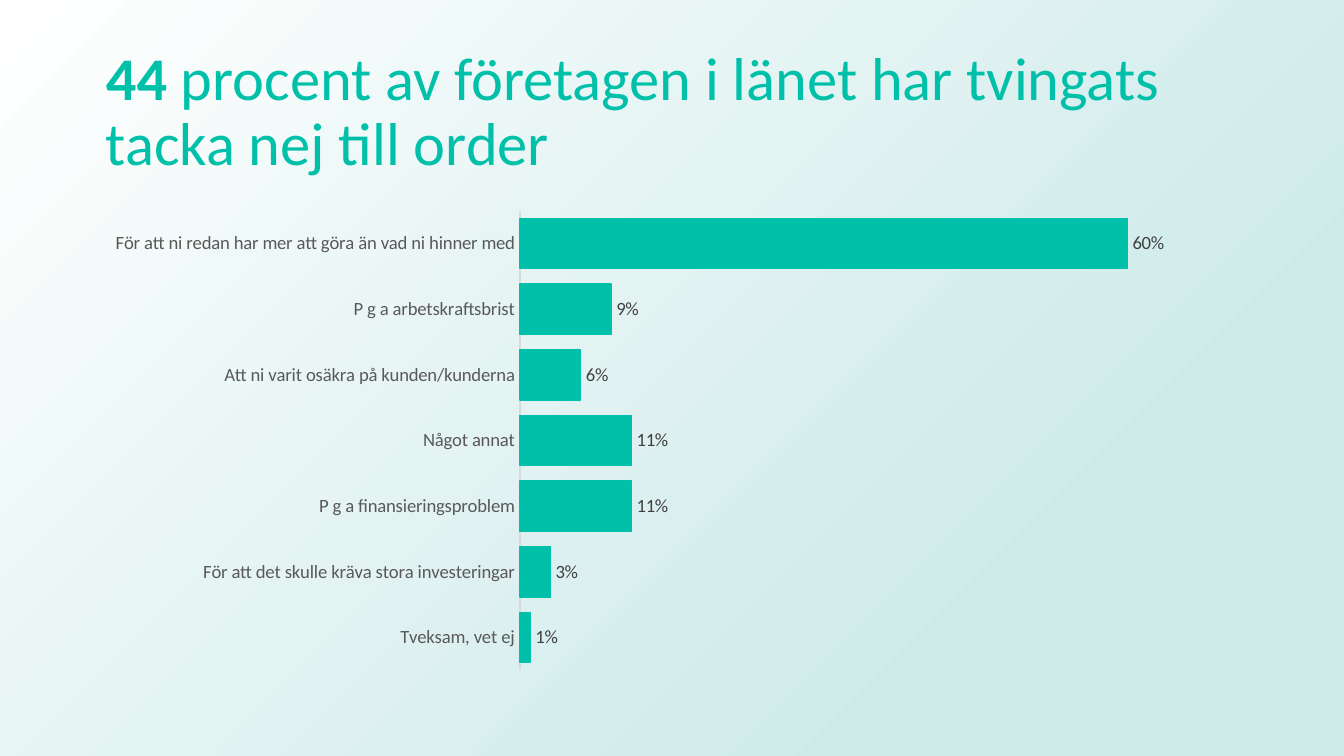
from lxml.etree import fromstring
from pptx import Presentation
from pptx.chart.data import CategoryChartData
from pptx.dml.color import RGBColor
from pptx.enum.chart import XL_CHART_TYPE, XL_LABEL_POSITION, XL_TICK_LABEL_POSITION, XL_TICK_MARK
from pptx.enum.shapes import MSO_SHAPE
from pptx.enum.text import MSO_ANCHOR, MSO_AUTO_SIZE, PP_ALIGN
from pptx.oxml.ns import nsdecls
from pptx.util import Inches, Pt

WIDE = Inches(10)
HIGH = WIDE * 9 // 16
TEAL, PALE, WHITE = "00C0A9", "CDEAE9", "FFFFFF"
GREY, DARK, RULE = "595959", "404040", "D9D9D9"
FACE = "Calibri"

REASONS = {
    "För att ni redan har mer att göra än vad ni hinner med": 0.60,
    "P g a arbetskraftsbrist": 0.09,
    "Att ni varit osäkra på kunden/kunderna": 0.06,
    "Något annat": 0.11,
    "P g a finansieringsproblem": 0.11,
    "För att det skulle kräva stora investeringar": 0.03,
    "Tveksam, vet ej": 0.01,
}


def paint(text):
    return RGBColor.from_string(text)


def apply(thing, values):
    for name, value in values.items():
        setattr(thing, name, value)


def style(font, size, color, bold=False):
    apply(font, {"name": FACE, "size": Pt(size), "bold": bold})
    font.color.rgb = paint(color)


def rule(line, color):
    line.color.rgb = paint(color)
    line.width = Pt(0.75)


def box(left, top, width, height):
    """Turn percentages of the slide into a frame."""
    return {"left": int(WIDE * left / 100), "top": int(HIGH * top / 100),
            "width": int(WIDE * width / 100), "height": int(HIGH * height / 100)}


def add_back(slide):
    back = slide.shapes.add_shape(MSO_SHAPE.RECTANGLE, **box(0, 0, 100, 100))
    back.shadow.inherit = False
    back.line.fill.background()
    # Radial fill centred on the lower right corner
    stops = "".join(
        f'<a:gs pos="{pos * 1000}"><a:srgbClr val="{color}"/></a:gs>'
        for pos, color in ((23, PALE), (100, WHITE)))
    fill = fromstring(
        f'<a:gradFill {nsdecls("a")} rotWithShape="1"><a:gsLst>{stops}</a:gsLst>'
        '<a:path path="circle"><a:fillToRect l="100000" t="100000"/></a:path>'
        '</a:gradFill>')
    back.element.spPr.prstGeom.addnext(fill)
    # Send behind the title
    slide.shapes.element.insert(2, back.element)


def add_title(slide, parts):
    title = slide.shapes.title
    apply(title, box(6.88, 5.32, 86.25, 19.33))
    frame = title.text_frame
    apply(frame, {"word_wrap": True, "auto_size": MSO_AUTO_SIZE.NONE,
                  "vertical_anchor": MSO_ANCHOR.MIDDLE})
    line = frame.paragraphs[0]
    apply(line, {"alignment": PP_ALIGN.LEFT, "line_spacing": 0.9})
    for text, bold in parts:
        run = line.add_run()
        run.text = text
        style(run.font, 32.4, TEAL, bold)


def add_bars(slide, shares):
    data = CategoryChartData(number_format="0%")
    data.categories = list(shares)
    data.add_series("Series 1", list(shares.values()))
    frame = box(6.88, 26.62, 86.25, 63.33)
    chart = slide.shapes.add_chart(
        XL_CHART_TYPE.BAR_CLUSTERED, frame["left"], frame["top"],
        frame["width"], frame["height"], data).chart
    apply(chart, {"has_legend": False, "has_title": False})
    style(chart.font, 10, "000000")

    # Axes
    plain = {"has_major_gridlines": False,
             "major_tick_mark": XL_TICK_MARK.NONE,
             "minor_tick_mark": XL_TICK_MARK.NONE,
             "tick_label_position": XL_TICK_LABEL_POSITION.NEXT_TO_AXIS}
    names, scale = chart.category_axis, chart.value_axis
    apply(names, {**plain, "reverse_order": True})
    style(names.tick_labels.font, 10, GREY)
    rule(names.format.line, RULE)
    apply(scale, {**plain, "visible": False,
                  "minimum_scale": 0, "maximum_scale": 0.7})
    apply(scale.tick_labels, {"number_format": "0%",
                              "number_format_is_linked": False})

    # Bars and labels
    plot = chart.plots[0]
    apply(plot, {"gap_width": 30, "vary_by_categories": False})
    series = plot.series[0]
    bars = series.format
    bars.fill.solid()
    bars.fill.fore_color.rgb = paint(TEAL)
    rule(bars.line, TEAL)
    labels = series.data_labels
    apply(labels, {"show_value": True, "number_format": "0%",
                   "number_format_is_linked": False,
                   "position": XL_LABEL_POSITION.OUTSIDE_END})
    style(labels.font, 10, DARK)


def main():
    deck = Presentation()
    apply(deck, {"slide_width": WIDE, "slide_height": HIGH})
    slide = deck.slides.add_slide(deck.slide_layouts[5])
    add_back(slide)
    add_title(slide, (
        ("44 ", True),
        ("procent av företagen i länet har tvingats tacka nej till order", False)))
    add_bars(slide, REASONS)
    deck.save("out.pptx")


if __name__ == "__main__":
    main()
